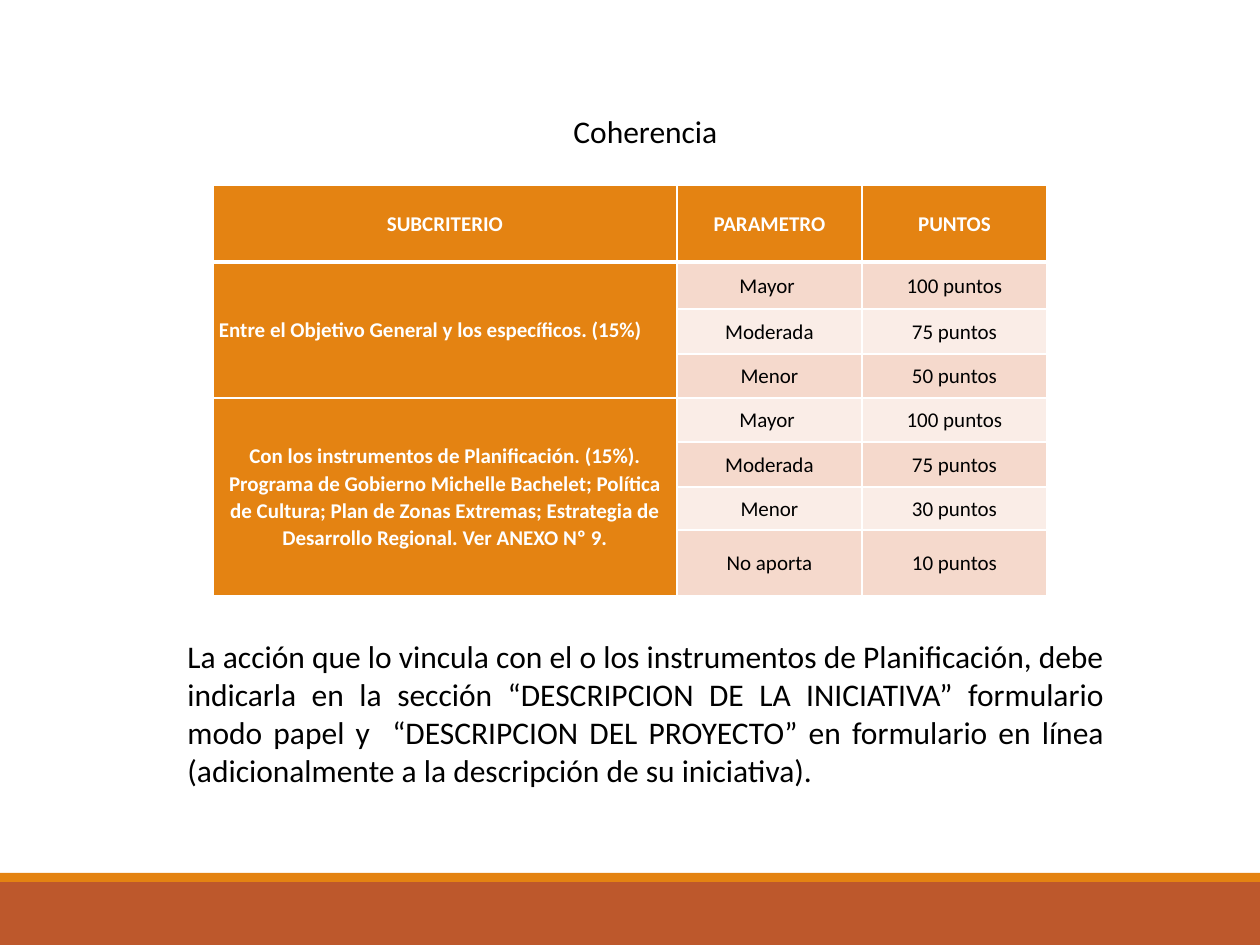
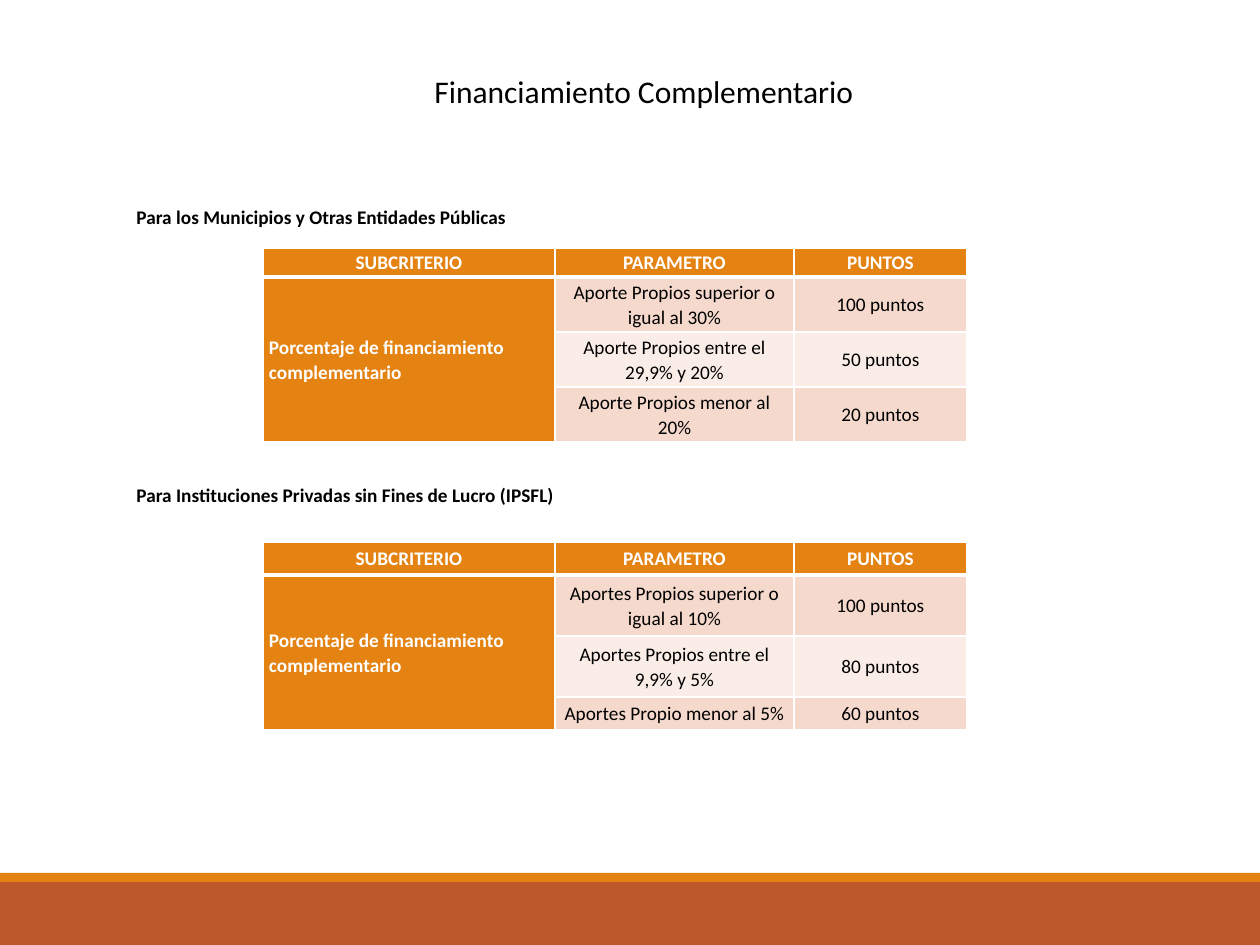
from lxml.etree import SubElement
from pptx import Presentation
from pptx.dml.color import RGBColor
from pptx.enum.shapes import MSO_SHAPE
from pptx.enum.text import MSO_ANCHOR, MSO_AUTO_SIZE, PP_ALIGN
from pptx.oxml.ns import qn
from pptx.util import Pt

PX = 914400 // 126
FONT = "Calibri"
BLACK, WHITE = "000000", "FFFFFF"
ORANGE, RUST = "E48312", "BD582C"
ROW_BANDS = ["F5D9CC", "FAEDE7"]
HEADERS = ["SUBCRITERIO", "PARAMETRO", "PUNTOS"]
color = RGBColor.from_string


def add_text(slide, box, text, size=18, bold=False, wrap=True,
             anchor=MSO_ANCHOR.TOP, align=PP_ALIGN.LEFT):
    text_box = slide.shapes.add_textbox(*[length * PX for length in box])
    frame = text_box.text_frame
    frame.word_wrap = wrap
    frame.auto_size = MSO_AUTO_SIZE.SHAPE_TO_FIT_TEXT
    frame.vertical_anchor = anchor
    paragraph = frame.paragraphs[0]
    paragraph.text = text
    paragraph.alignment = align
    paragraph.font.name = FONT
    paragraph.font.size = Pt(size)
    paragraph.font.bold = bold
    paragraph.font.color.rgb = color(BLACK)


def add_score_table(slide, left, top, widths, heights, groups, size, space_after=0):
    """Each group is (subcriterio, its alignment, [(parametro, puntos), ...])."""
    table = slide.shapes.add_table(
        len(heights), len(widths), left * PX, top * PX,
        sum(widths) * PX, sum(heights) * PX).table
    for column, width in zip(table.columns, widths):
        column.width = width * PX
    for row, height in zip(table.rows, heights):
        row.height = height * PX

    rows = [HEADERS]
    alignments = {}
    for subcriterion, alignment, scores in groups:
        first = len(rows)
        alignments[first] = alignment
        rows += [[subcriterion if i == 0 else "", *score] for i, score in enumerate(scores)]
        table.cell(first, 0).merge(table.cell(len(rows) - 1, 0))

    for r, texts in enumerate(rows):
        for c, text in enumerate(texts):
            cell = table.cell(r, c)
            is_heading = r == 0 or c == 0
            cell.text = text
            cell.vertical_anchor = MSO_ANCHOR.MIDDLE
            cell.margin_left = cell.margin_right = 6 * PX
            cell.margin_top = cell.margin_bottom = 0
            for paragraph in cell.text_frame.paragraphs:
                paragraph.alignment = PP_ALIGN.CENTER if c else alignments.get(r, PP_ALIGN.CENTER)
                paragraph.line_spacing = 1.07
                paragraph.space_after = Pt(0 if is_heading else space_after)
                paragraph.font.name = FONT
                paragraph.font.size = Pt(size)
                paragraph.font.bold = is_heading
                paragraph.font.color.rgb = color(WHITE if is_heading else BLACK)
            properties = cell._tc.get_or_add_tcPr()
            for side in ["lnL", "lnR", "lnT", "lnB"]:
                below_header = (r, side) in [(0, "lnB"), (1, "lnT")]
                border = SubElement(properties, qn(f"a:{side}"), w=str(Pt(3 if below_header else 1)))
                SubElement(SubElement(border, qn("a:solidFill")), qn("a:srgbClr"), val=WHITE)
            cell.fill.solid()
            cell.fill.fore_color.rgb = color(ORANGE if is_heading else ROW_BANDS[(r - 1) % 2])


presentation = Presentation()
presentation.slide_width = 1260 * PX
presentation.slide_height = 945 * PX

slides = []
for title, title_box in [
    ("Coherencia", (561, 106, 171, 50)),
    ("Financiamiento Complementario", (422, 66, 449, 50)),
]:
    slide = presentation.slides.add_slide(presentation.slide_layouts[6])
    for top, height, fill in [(882, 63, RUST), (873, 9, ORANGE)]:
        band = slide.shapes.add_shape(MSO_SHAPE.RECTANGLE, 0, top * PX, 1260 * PX, height * PX)
        band.shadow.inherit = False
        band.fill.solid()
        band.fill.fore_color.rgb = color(fill)
        band.line.fill.background()
    add_text(slide, title_box, title, wrap=False)
    slides.append(slide)
coherence, funding = slides

# Coherencia
add_score_table(
    coherence, 213, 185, [464, 185, 185], [77, 47, 45, 44, 44, 45, 43, 66],
    [
        ("Entre el Objetivo General y los específicos. (15%)", PP_ALIGN.LEFT,
         [("Mayor ", "100 puntos"), ("Moderada", "75 puntos"), ("Menor", "50 puntos")]),
        ("Con los instrumentos de Planificación. (15%).\n"
         "Programa de Gobierno Michelle Bachelet; Política de Cultura; Plan de Zonas "
         "Extremas; Estrategia de Desarrollo Regional. Ver ANEXO Nº 9.", PP_ALIGN.CENTER,
         [("Mayor ", "100 puntos"), ("Moderada", "75 puntos"),
          ("Menor", "30 puntos"), ("No aporta", "10 puntos")]),
    ],
    size=12, space_after=8)
add_text(
    coherence, (175, 631, 942, 165),
    "La acción que lo vincula con el o los instrumentos de Planificación, debe indicarla "
    "en la sección “DESCRIPCION DE LA INICIATIVA” formulario modo papel y  “DESCRIPCION "
    "DEL PROYECTO” en formulario en línea (adicionalmente a la descripción de su iniciativa).",
    align=PP_ALIGN.JUSTIFY)

# Financiamiento Complementario
for heading, heading_top, table_top, heights, scores in [
    ("Para los Municipios y Otras Entidades Públicas", 198, 248, [29, 55, 55, 55],
     [("Aporte Propios superior o igual al 30%", "100 puntos"),
      ("Aporte Propios entre el 29,9% y 20%", "50 puntos"),
      ("Aporte Propios menor al 20%", "20 puntos")]),
    ("Para Instituciones Privadas sin Fines de Lucro (IPSFL)", 476, 542, [33, 61, 61, 33],
     [("Aportes Propios superior o igual al 10%", "100 puntos"),
      ("Aportes Propios entre el 9,9% y 5%", "80 puntos"),
      ("Aportes Propio menor al 5%", "60 puntos")]),
]:
    add_text(funding, (124, heading_top, 843, 37), heading, size=11, bold=True,
             anchor=MSO_ANCHOR.MIDDLE)
    add_score_table(
        funding, 263, table_top, [292, 239, 173], heights,
        [("Porcentaje de financiamiento complementario", PP_ALIGN.LEFT, scores)], size=11)

presentation.save("out.pptx")
